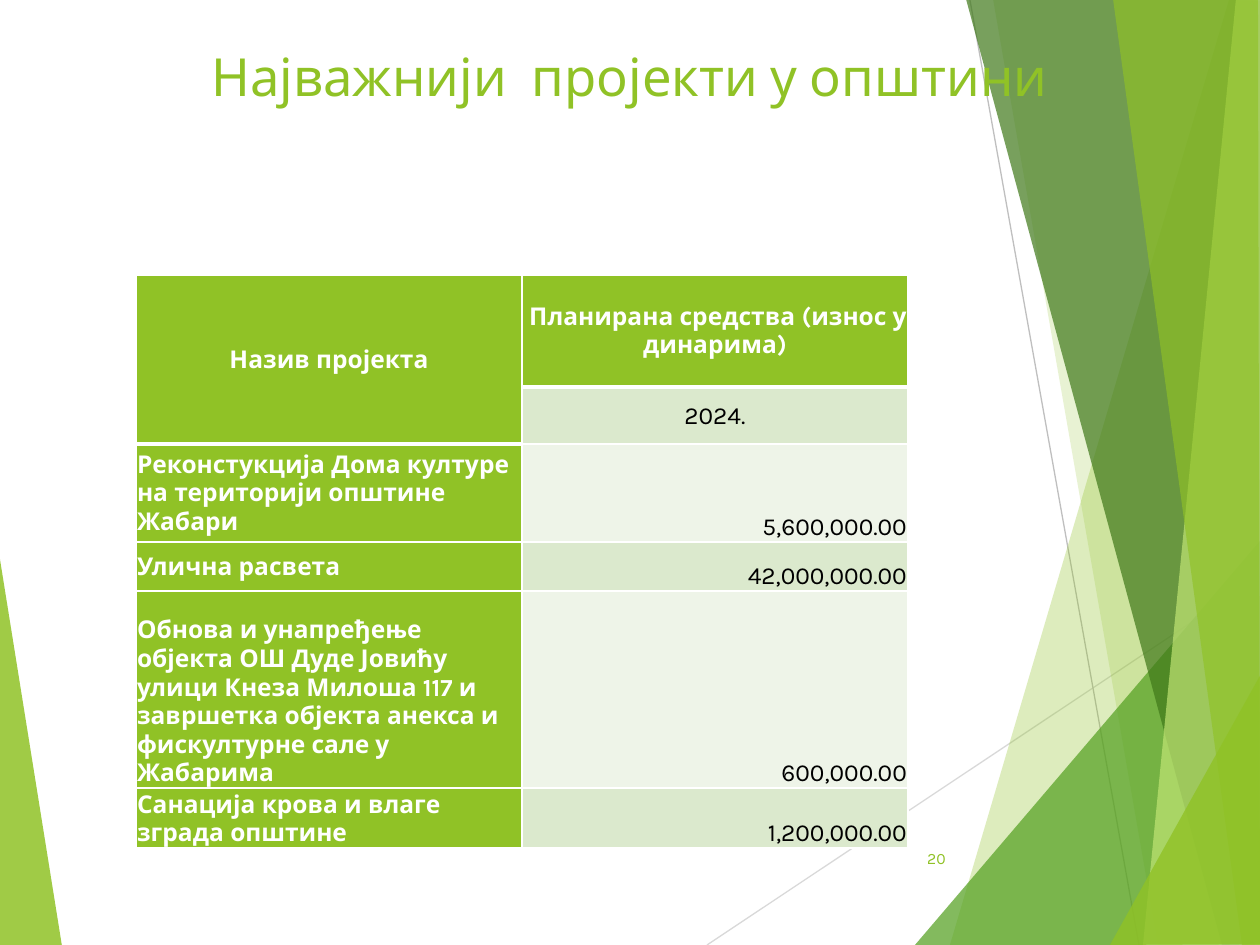
import pptx
import pptx.util
import pptx.dml.color
import pptx.enum.text
import pptx.enum.shapes
import pptx.oxml.ns
import lxml.etree

UNIT = 914400 / 126
FONT = "Karla"
COLORS = {
    "lime": "90C226", "green": "54A021", "dark": "3F7819", "pale": "C0E474",
    "white": "FFFFFF", "black": "000000", "band": "DBE9CD", "light": "EEF4E8",
    "gray": "BFBFBF", "mist": "D9D9D9",
}
ALIGN = pptx.enum.text.PP_ALIGN
ANCHOR = pptx.enum.text.MSO_ANCHOR

LINES = [
    ((707, 945), (1261, 576), "mist"),
    ((970, 0), (1139, 945), "gray"),
]
FACETS = [
    ([(-1, 553), (62, 946), (-1, 945)], "lime", 85),
    ([(1229, 0), (950, 945), (1262, 946), (1261, 1)], "lime", 30),
    ([(993, -1), (1158, 945), (1261, 945), (1261, -1)], "lime", 20),
    ([(915, 945), (1260, 541), (1261, 945)], "green", 72),
    ([(966, -1), (1222, 945), (1261, 944), (1261, -1)], "dark", 70),
    ([(1236, -1), (1143, 945), (1261, 945), (1260, -1)], "pale", 70),
    ([(1113, -1), (1242, 945), (1260, 945), (1258, -1)], "lime", 65),
    ([(1110, 945), (1261, 674), (1261, 944)], "lime", 80),
]
ITEMS = [
    ("Реконстукција Дома културе на територији општине Жабари",
     "5,600,000.00", ANCHOR.MIDDLE),
    ("Улична расвета", "42,000,000.00", ANCHOR.MIDDLE),
    ("Обнова и унапређење објекта ОШ Дуде Јовићу улици Кнеза Милоша 117 "
     "и завршетка објекта анекса и фискултурне сале у Жабарима",
     "600,000.00", ANCHOR.BOTTOM),
    ("Санација крова и влаге зграда општине", "1,200,000.00", ANCHOR.BOTTOM),
]


def px(n):
    return pptx.util.Emu(round(n * UNIT))


def rgb(name):
    return pptx.dml.color.RGBColor.from_string(COLORS[name])


def sub(node, tag, **attrs):
    return lxml.etree.SubElement(node, pptx.oxml.ns.qn(tag), **attrs)


def line(slide, start, end, color):
    kind = pptx.enum.shapes.MSO_CONNECTOR.STRAIGHT
    rule = slide.shapes.add_connector(kind, *map(px, start + end))
    rule.line.color.rgb = rgb(color)
    rule.line.width = pptx.util.Pt(0.75)
    sub(rule._element.spPr, "a:effectLst")


def facet(slide, points, color, alpha):
    pen = slide.shapes.build_freeform(*points[0], scale=UNIT)
    pen.add_line_segments(points[1:], close=True)
    shape = pen.convert_to_shape()
    shape.shadow.inherit = False
    shape.line.fill.background()
    shape.fill.solid()
    shape.fill.fore_color.rgb = rgb(color)
    tint = shape._element.spPr.find(".//" + pptx.oxml.ns.qn("a:srgbClr"))
    sub(tint, "a:alpha", val=str(alpha * 1000))


def write(frame, text, size, color, align, bold=False):
    para = frame.paragraphs[0]
    para.alignment = align
    run = para.add_run()
    run.text = text
    run.font.name = FONT
    run.font.size = pptx.util.Pt(size)
    run.font.bold = bold
    run.font.color.rgb = rgb(color)


def label(slide, box, text, size, align, anchor):
    frame = slide.shapes.add_textbox(*map(px, box)).text_frame
    frame.word_wrap = True
    frame.vertical_anchor = anchor
    write(frame, text, size, "lime", align)


def border(cell, base):
    props = cell._tc.get_or_add_tcPr()
    for spot, side in enumerate("LRTB"):
        width = base if side == "B" else 1
        edge = sub(props, "a:ln" + side, w=str(pptx.util.Pt(width)))
        sub(sub(edge, "a:solidFill"), "a:srgbClr", val=COLORS["white"])
        props.insert(spot, edge)


def fill(cell, text, back, color, align, anchor, base=1):
    cell.fill.solid()
    cell.fill.fore_color.rgb = rgb(back)
    cell.vertical_anchor = anchor
    cell.margin_left = cell.margin_right = cell.margin_top = px(1)
    cell.margin_bottom = 0
    border(cell, base)
    if text:
        write(cell.text_frame, text, 14, color, align, color == "white")


def grid(slide):
    rows = [112, 57, 98, 49, 197, 47]
    cols = [386, 386]
    frame = slide.shapes.add_table(
        len(rows), len(cols), px(136), px(275), px(sum(cols)), px(sum(rows)))
    table = frame.table
    table.first_row = table.horz_banding = False
    for row, high in zip(table.rows, rows):
        row.height = px(high)
    for col, wide in zip(table.columns, cols):
        col.width = px(wide)
    mid = ALIGN.CENTER, ANCHOR.MIDDLE
    table.cell(0, 0).merge(table.cell(1, 0))
    fill(table.cell(0, 0), "Назив пројекта", "lime", "white", *mid, base=3)
    fill(table.cell(1, 0), "", "lime", "white", *mid, base=3)
    fill(table.cell(0, 1), " Планирана средства (износ у динарима)",
         "lime", "white", *mid, base=3)
    fill(table.cell(1, 1), "2024.", "band", "black", *mid)
    for i, (name, cost, anchor) in enumerate(ITEMS, 2):
        back = "band" if i % 2 else "light"
        fill(table.cell(i, 0), name, "lime", "white", ALIGN.LEFT, anchor)
        fill(table.cell(i, 1), cost, back, "black", ALIGN.RIGHT, ANCHOR.BOTTOM)


def main():
    deck = pptx.Presentation()
    deck.slide_width, deck.slide_height = px(1260), px(945)
    slide = deck.slides.add_slide(deck.slide_layouts[6])
    facet(slide, *FACETS[0])
    for item in LINES:
        line(slide, *item)
    for item in FACETS[1:]:
        facet(slide, *item)
    label(slide, (63, 38, 1134, 121), "Најважнији  пројекти у општини",
          30, ALIGN.CENTER, ANCHOR.TOP)
    label(slide, (888, 833, 70, 50), "20", 9, ALIGN.RIGHT, ANCHOR.MIDDLE)
    grid(slide)
    deck.save("out.pptx")


main()
